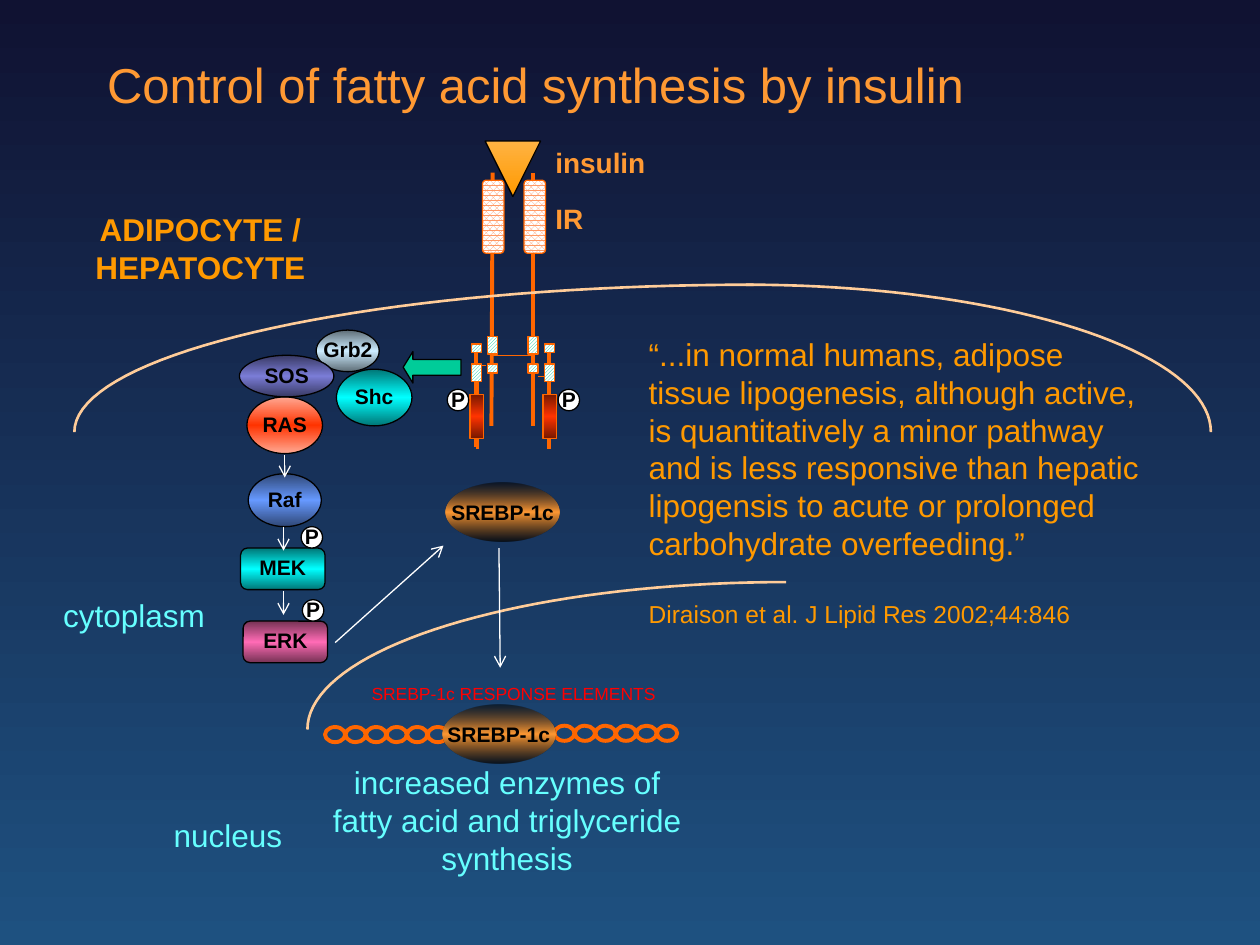
"""Build the slide on how insulin controls fatty acid synthesis."""
from copy import deepcopy
from math import cos, pi, sin

from lxml.etree import SubElement
from pptx import Presentation
from pptx.dml.color import RGBColor
from pptx.enum.dml import MSO_PATTERN_TYPE as Pattern
from pptx.enum.shapes import MSO_CONNECTOR, MSO_SHAPE as Shape
from pptx.enum.text import MSO_ANCHOR, MSO_AUTO_SIZE, PP_ALIGN as Align
from pptx.oxml.ns import qn
from pptx.util import Inches, Pt

BLACK = RGBColor(0x00, 0x00, 0x00)
WHITE = RGBColor(0xFF, 0xFF, 0xFF)
NAVY = RGBColor(0x10, 0x12, 0x32)
BLUE = RGBColor(0x1E, 0x51, 0x80)
ORANGE = RGBColor(0xFF, 0x99, 0x33)
AMBER = RGBColor(0xFF, 0x99, 0x00)
LIGHT_AMBER = RGBColor(0xFF, 0xB3, 0x42)
RECEPTOR = RGBColor(0xFF, 0x66, 0x00)
SALMON = RGBColor(0xFF, 0x99, 0x66)
MEMBRANE = RGBColor(0xFF, 0xCC, 0x99)
AQUA = RGBColor(0x66, 0xFF, 0xFF)
GREEN = RGBColor(0x00, 0xCC, 0x99)
RED = RGBColor(0xFF, 0x00, 0x00)
SCARLET = RGBColor(0xFF, 0x33, 0x00)
MAROON = RGBColor(0x76, 0x18, 0x00)
ROSE = RGBColor(0xFF, 0xA8, 0x92)
TEAL = RGBColor(0x00, 0x76, 0x76)
CYAN = RGBColor(0x00, 0xFF, 0xFF)
SLATE = RGBColor(0x5E, 0x6D, 0x76)
ICE = RGBColor(0xCC, 0xEC, 0xFF)
INDIGO = RGBColor(0x38, 0x39, 0x63)
LAVENDER = RGBColor(0x7A, 0x7C, 0xD6)
STEEL = RGBColor(0x2F, 0x47, 0x76)
SKY = RGBColor(0x66, 0x99, 0xFF)
PLUM = RGBColor(0x76, 0x32, 0x54)
PINK = RGBColor(0xFF, 0x6B, 0xB5)


def paint_gradient(fill, element, colors):
    """Fill from top to bottom with two or three evenly spaced colours."""
    fill.gradient()
    fill.gradient_angle = 270
    stop_list = element.xpath(".//a:gsLst")[0]
    if len(colors) == 3:
        stop_list.insert(1, deepcopy(stop_list[0]))
    for index, (stop, color) in enumerate(zip(fill.gradient_stops, colors)):
        stop.position = index / (len(colors) - 1)
        stop.color.rgb = color


def add_part(shapes, kind, box, outline=BLACK, weight=0.75):
    """Add an unfilled preset shape with an outline."""
    part = shapes.add_shape(kind, *map(Inches, box))
    part.shadow.inherit = False
    part.fill.background()
    if outline is None:
        part.line.fill.background()
    else:
        part.line.color.rgb = outline
        part.line.width = Pt(weight)
    return part


def add_solid(shapes, kind, box, color):
    """Add a plain shape with a black outline."""
    part = add_part(shapes, kind, box)
    part.fill.solid()
    part.fill.fore_color.rgb = color
    return part


def add_shaded(shapes, kind, box, colors, outline=BLACK):
    """Add a shape with a vertical gradient."""
    part = add_part(shapes, kind, box, outline)
    paint_gradient(part.fill, part._element, colors)
    return part


def add_hatched(shapes, kind, box, pattern, color):
    """Add a receptor domain with a pattern on white."""
    domain = add_part(shapes, kind, box, RECEPTOR)
    domain.fill.patterned()
    domain.fill.pattern = pattern
    domain.fill.fore_color.rgb = color
    domain.fill.back_color.rgb = WHITE


def add_line(shapes, start, end, color, weight=0.75, arrow=False):
    """Add a straight line, with an open arrowhead at its end if asked."""
    line = shapes.add_connector(MSO_CONNECTOR.STRAIGHT, *map(Inches, start + end))
    line.line.color.rgb = color
    line.line.width = Pt(weight)
    properties = line._element.spPr
    if arrow:
        SubElement(properties.find(qn("a:ln")), qn("a:tailEnd"), type="arrow")
    SubElement(properties, qn("a:effectLst"))


def add_membrane(shapes, left, right, top, height, center):
    """Add a quarter of an ellipse from its top to its side."""
    side = left + right - center
    points = [
        (Inches(center + (side - center) * sin(step * pi / 80)),
         Inches(top + height * (1 - cos(step * pi / 80))))
        for step in range(41)
    ]
    builder = shapes.build_freeform(*points[0])
    builder.add_line_segments(points[1:], close=False)
    curve = builder.convert_to_shape()
    curve.shadow.inherit = False
    curve.fill.background()
    curve.line.color.rgb = MEMBRANE
    curve.line.width = Pt(1.5)


def write(frame, lines, size, color, bold=False, align=Align.LEFT, wrap=True):
    """Write one paragraph per line in a single style."""
    frame.word_wrap = wrap
    frame.text = "\n".join(lines)
    for paragraph in frame.paragraphs:
        paragraph.alignment = align
        font = paragraph.font
        font.name, font.size, font.bold = "Arial", Pt(size), bold
        font.color.rgb = color


def add_text(shapes, box, lines, size, color, **style):
    """Add a text box that grows with its text."""
    frame = shapes.add_textbox(*map(Inches, box)).text_frame
    write(frame, lines, size, color, **style)
    frame.auto_size = MSO_AUTO_SIZE.SHAPE_TO_FIT_TEXT
    return frame


def add_label(shapes, box, name, width):
    """Centre a bold black label on the box of its protein."""
    left, top, box_width, height = box
    label_box = (left + (box_width - width) / 2, top + height / 2 - 0.16, width, 0.3)
    add_text(shapes, label_box, [name], 12, BLACK, bold=True, align=Align.CENTER, wrap=False)


def add_protein(shapes, kind, box, name, label_width, colors):
    """Add a shaded protein grouped with its label."""
    group = shapes.add_group_shape().shapes
    add_shaded(group, kind, box, colors)
    add_label(group, box, name, label_width)


def add_phosphate(shapes, left, top):
    """Add a white disc marked P."""
    group = shapes.add_group_shape().shapes
    box = (left, top, 0.17, 0.17)
    add_solid(group, Shape.OVAL, box, WHITE)
    add_label(group, box, "P", 0.31)


def add_srebp(shapes, left, top):
    """Add the transcription factor with see-through dark edges."""
    factor = add_shaded(shapes, Shape.OVAL, (left, top, 0.9, 0.47), (BLACK, ORANGE, BLACK), None)
    colors = factor._element.xpath(".//a:gs/a:srgbClr")
    for color, opacity in ((colors[0], 54), (colors[2], 72)):
        SubElement(color, qn("a:alpha"), val=str(opacity * 1000))
    write(factor.text_frame, ["SREBP-1c"], 12, BLACK, bold=True, align=Align.CENTER, wrap=False)
    factor.text_frame.vertical_anchor = MSO_ANCHOR.MIDDLE


def add_dna(shapes, left, top):
    """Add a chain of six open loops."""
    group = shapes.add_group_shape().shapes
    for loop in range(6):
        add_part(group, Shape.OVAL, (left + loop * 0.163, top, 0.16, 0.12), RECEPTOR, 2.25)


def add_receptor(shapes):
    """Add the two halves of the insulin receptor with bound insulin."""
    for start, end, weight in (
        ((4.23, 3.38), (4.23, 1.37), 2.25), ((3.9, 3.38), (3.91, 1.37), 2.25),
        ((4.36, 2.73), (4.36, 3.56), 2.25), ((3.78, 2.73), (3.78, 3.55), 2.25),
        ((3.79, 2.92), (3.79, 3.56), 2.25), ((3.91, 2.82), (4.24, 2.82), 0.75),
        ((4.27, 2.99), (4.32, 2.99), 0.75), ((3.81, 2.9), (3.86, 2.9), 0.75),
    ):
        add_line(shapes, start, end, RECEPTOR, weight)
    for outer, inner, kinase in ((3.74, 3.87, 3.73), (4.32, 4.19, 4.31)):
        add_shaded(shapes, Shape.RECTANGLE, (kinase, 3.13, 0.11, 0.35),
                   (MAROON, SCARLET, MAROON), RECEPTOR)
        for left, top, height in ((outer, 2.73, 0.07), (outer, 2.89, 0.14),
                                  (inner, 2.67, 0.14), (inner, 2.89, 0.07)):
            add_hatched(shapes, Shape.RECTANGLE, (left, top, 0.08, height),
                        Pattern.DARK_UPWARD_DIAGONAL, GREEN)
    insulin = add_shaded(shapes, Shape.ISOSCELES_TRIANGLE, (3.85, 1.12, 0.44, 0.44),
                         (AMBER, LIGHT_AMBER))
    insulin.rotation = 180
    for left in (3.83, 4.16):
        add_hatched(shapes, Shape.ROUNDED_RECTANGLE, (left, 1.43, 0.17, 0.58),
                    Pattern.PERCENT_75, SALMON)


def add_cascade(shapes):
    """Add the signalling chain from the receptor down to ERK."""
    for kind, box, name, label_width, colors in (
        (Shape.OVAL, (2.67, 2.93, 0.6, 0.45), "Shc", 0.51, (TEAL, CYAN, TEAL)),
        (Shape.OVAL, (1.96, 3.15, 0.6, 0.45), "RAS", 0.55, (ROSE, SCARLET, ROSE)),
        (Shape.OVAL, (2.51, 2.62, 0.5, 0.33), "Grb2", 0.59, (SLATE, ICE, SLATE)),
        (Shape.OVAL, (1.9, 2.82, 0.75, 0.33), "SOS", 0.55, (INDIGO, LAVENDER, INDIGO)),
        (Shape.OVAL, (1.97, 3.76, 0.58, 0.42), "Raf", 0.47, (STEEL, SKY, STEEL)),
        (Shape.ROUNDED_RECTANGLE, (1.91, 4.35, 0.67, 0.33), "MEK", 0.57, (TEAL, CYAN, TEAL)),
        (Shape.ROUNDED_RECTANGLE, (1.93, 4.93, 0.67, 0.33), "ERK", 0.55, (PLUM, PINK, PLUM)),
    ):
        add_protein(shapes, kind, box, name, label_width, colors)
    for left, top in ((4.43, 3.09), (3.55, 3.09), (2.39, 4.18), (2.4, 4.76)):
        add_phosphate(shapes, left, top)
    signal = add_solid(shapes, Shape.LEFT_ARROW, (3.2, 2.79, 0.46, 0.25), GREEN)
    signal.adjustments[1] = 0.31
    for start, end in (((2.26, 3.61), (2.26, 3.79)), ((2.25, 4.18), (2.25, 4.37)),
                       ((2.25, 4.69), (2.25, 4.88)), ((2.66, 5.1), (3.52, 4.33)),
                       ((3.96, 4.35), (3.97, 5.3))):
        add_line(shapes, start, end, WHITE, arrow=True)


def add_captions(shapes):
    """Add the place names, the outcome and the quotation."""
    for box, name in (((4.31, 1.11, 0.92, 0.37), "insulin"), ((4.31, 1.55, 0.42, 0.37), "IR")):
        add_text(shapes, box, [name], 16, ORANGE, bold=True, wrap=False)
    for box, caption in (
        ((0.28, 4.68, 1.57, 0.4), "cytoplasm"),
        ((0.93, 6.43, 1.76, 0.4), "nucleus"),
        ((2.5, 6.01, 3.05, 1.01), "increased enzymes of fatty acid and triglyceride synthesis"),
    ):
        add_text(shapes, box, [caption], 18, AQUA, align=Align.CENTER)
    add_text(shapes, (2.85, 5.37, 2.68, 0.27), ["SREBP-1c RESPONSE ELEMENTS"], 10, RED)
    add_text(shapes, (0.5, 1.62, 2.18, 0.71), ["ADIPOCYTE /", "HEPATOCYTE"], 18, AMBER,
             bold=True, align=Align.CENTER)
    quotation = add_text(shapes, (5.05, 2.61, 4.16, 2.46), [
        "“...in normal humans, adipose tissue lipogenesis, although active, is quantitatively "
        "a minor pathway and is less responsive than hepatic lipogensis to acute or prolonged "
        "carbohydrate overfeeding.”",
        "Diraison et al. J Lipid Res 2002;44:846"], 18, AMBER)
    citation = quotation.paragraphs[1]
    citation.font.size = Pt(14)
    citation.space_before = Pt(21)


def add_title(title):
    """Place and format the slide title."""
    title.left, title.top, title.width, title.height = map(Inches, (0.75, 0.38, 7.09, 0.57))
    write(title.text_frame, ["Control of fatty acid synthesis by insulin"], 28, ORANGE, wrap=False)
    title.text_frame.vertical_anchor = MSO_ANCHOR.TOP
    title.text_frame.auto_size = MSO_AUTO_SIZE.SHAPE_TO_FIT_TEXT


def main():
    """Build and save the slide."""
    deck = Presentation()
    deck.slide_width, deck.slide_height = Inches(10), Inches(7.5)
    slide = deck.slides.add_slide(deck.slide_layouts[5])
    shapes = slide.shapes
    paint_gradient(slide.background.fill, slide._element, (NAVY, BLUE))
    add_title(shapes.title)
    add_receptor(shapes)
    add_membrane(shapes, 0.59, 5.98, 2.26, 1.17, center=5.98)
    add_membrane(shapes, 5.92, 9.61, 2.26, 1.17, center=5.92)
    add_membrane(shapes, 2.44, 6.24, 4.62, 1.17, center=6.24)
    add_cascade(shapes)
    add_dna(shapes, 4.4, 5.76)
    add_dna(shapes, 2.58, 5.77)
    for left, top in ((3.54, 3.83), (3.51, 5.59)):
        add_srebp(shapes, left, top)
    add_captions(shapes)
    deck.save("out.pptx")


if __name__ == "__main__":
    main()
